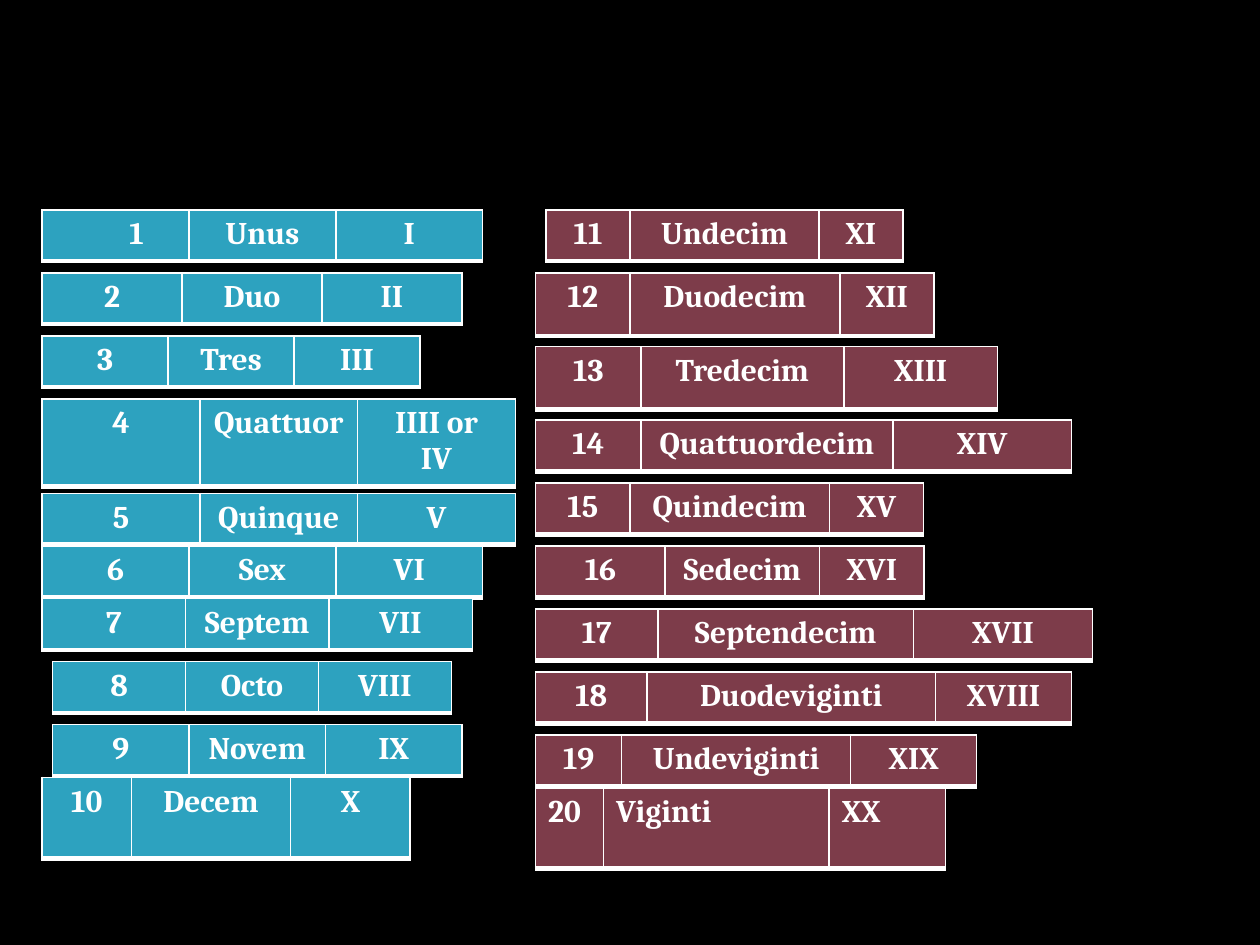
from lxml.etree import SubElement
from pptx import Presentation
from pptx.dml.color import RGBColor as Rgb
from pptx.enum.text import PP_ALIGN as Align
from pptx.oxml.ns import qn
from pptx.util import Cm, Pt

COLORS = {"back": "000000", "ink": "FFFFFF", "teens": "7D3C4A", "units": "2DA2BF"}
FONT, SIZE = "Cambria", 18
ROW_HEIGHT = 1.03
BORDERS = {"L": 1, "R": 1, "T": 1, "B": 3}  # points per cell side
INDENTED = {"1": 1.1}  # wider left margin, cm
LEFT_ALIGNED = {"20"}

# words, left, top, column widths, height (cm)
# Ten and twenty come first so that the rows above them overlap their top edges.
UNITS = [
    (("10", "Decem", "X"), 0.85, 15.67, (1.8, 3.21, 2.41), 1.63),
    (("1", "Unus", "I"), 0.85, 4.23, (2.96,) * 3, ROW_HEIGHT),
    (("2", "Duo", "II"), 0.85, 5.5, (2.82,) * 3, ROW_HEIGHT),
    (("3", "Tres", "III"), 0.85, 6.77, (2.54,) * 3, ROW_HEIGHT),
    (("4", "Quattuor", "IIII or\nIV"), 0.85, 8.04, (3.18,) * 3, 1.77),
    (("5", "Quinque", "V"), 0.85, 9.95, (3.18,) * 3, ROW_HEIGHT),
    (("6", "Sex", "VI"), 0.85, 11.01, (2.96,) * 3, ROW_HEIGHT),
    (("7", "Septem", "VII"), 0.85, 12.07, (2.89,) * 3, ROW_HEIGHT),
    (("8", "Octo", "VIII"), 1.06, 13.34, (2.68,) * 3, ROW_HEIGHT),
    (("9", "Novem", "IX"), 1.06, 14.61, (2.75,) * 3, ROW_HEIGHT),
]
TEENS = [
    (("20", "Viginti", "XX"), 4.25 * 2.54, 15.88, (1.37, 4.55, 2.34), 1.63),
    (("11", "Undecim", "XI"), 11.01, 4.23, (1.69, 3.81, 1.69), ROW_HEIGHT),
    (("12", "Duodecim", "XII"), 10.8, 5.5, (1.9, 4.23, 1.9), 1.27),
    (("13", "Tredecim", "XIII"), 10.8, 6.99, (2.12, 4.09, 3.1), 1.27),
    (("14", "Quattuordecim", "XIV"), 10.8, 8.47, (2.12, 5.08, 3.6), ROW_HEIGHT),
    (("15", "Quindecim", "XV"), 10.8, 9.74, (1.9, 4.02, 1.9), ROW_HEIGHT),
    (("16", "Sedecim", "XVI"), 10.8, 11.01, (2.61, 3.11, 2.11), ROW_HEIGHT),
    (("17", "Septendecim", "XVII"), 10.8, 12.28, (2.46, 5.16, 3.6), ROW_HEIGHT),
    (("18", "Duodeviginti", "XVIII"), 10.8, 13.55, (2.24, 5.82, 2.74), ROW_HEIGHT),
    (("19", "Undeviginti", "XIX"), 10.8, 14.82, (1.73, 4.62, 2.54), ROW_HEIGHT),
]


def draw_borders(cell):
    props = cell._tc.get_or_add_tcPr()
    for place, (side, width) in enumerate(BORDERS.items()):
        line = SubElement(props, qn(f"a:ln{side}"), w=str(Pt(width)))
        SubElement(SubElement(line, qn("a:solidFill")), qn("a:srgbClr"), val=COLORS["ink"])
        props.insert(place, line)  # borders must precede the cell fill


def write_cell(cell, text, color, align):
    cell.fill.solid()
    cell.fill.fore_color.rgb = Rgb.from_string(color)
    draw_borders(cell)
    if text in INDENTED:
        cell.margin_left = Cm(INDENTED[text])
    frame = cell.text_frame
    for number, words in enumerate(text.split("\n")):
        para = frame.add_paragraph() if number else frame.paragraphs[0]
        para.alignment = align
        span = para.add_run()
        span.text = words
        span.font.name, span.font.size, span.font.bold = FONT, Pt(SIZE), True
        span.font.color.rgb = Rgb.from_string(COLORS["ink"])


def add_numeral(page, color, words, left, top, widths, height):
    """Add a one-row table: number, Latin word, Roman numeral."""
    table = page.shapes.add_table(
        1, len(words), Cm(left), Cm(top), Cm(sum(widths)), Cm(height)
    ).table
    table.first_row = table.horz_banding = False
    table.rows[0].height = Cm(height)
    align = Align.LEFT if words[0] in LEFT_ALIGNED else Align.CENTER
    for index, (text, width) in enumerate(zip(words, widths)):
        table.columns[index].width = Cm(width)
        write_cell(table.cell(0, index), text, color, align)


def main():
    deck = Presentation()
    deck.slide_width, deck.slide_height = Cm(25.4), Cm(19.05)
    page = deck.slides.add_slide(deck.slide_layouts[6])
    page.background.fill.solid()
    page.background.fill.fore_color.rgb = Rgb.from_string(COLORS["back"])
    for group, numerals in (("units", UNITS), ("teens", TEENS)):
        for numeral in numerals:
            add_numeral(page, COLORS[group], *numeral)
    deck.save("out.pptx")


if __name__ == "__main__":
    main()
